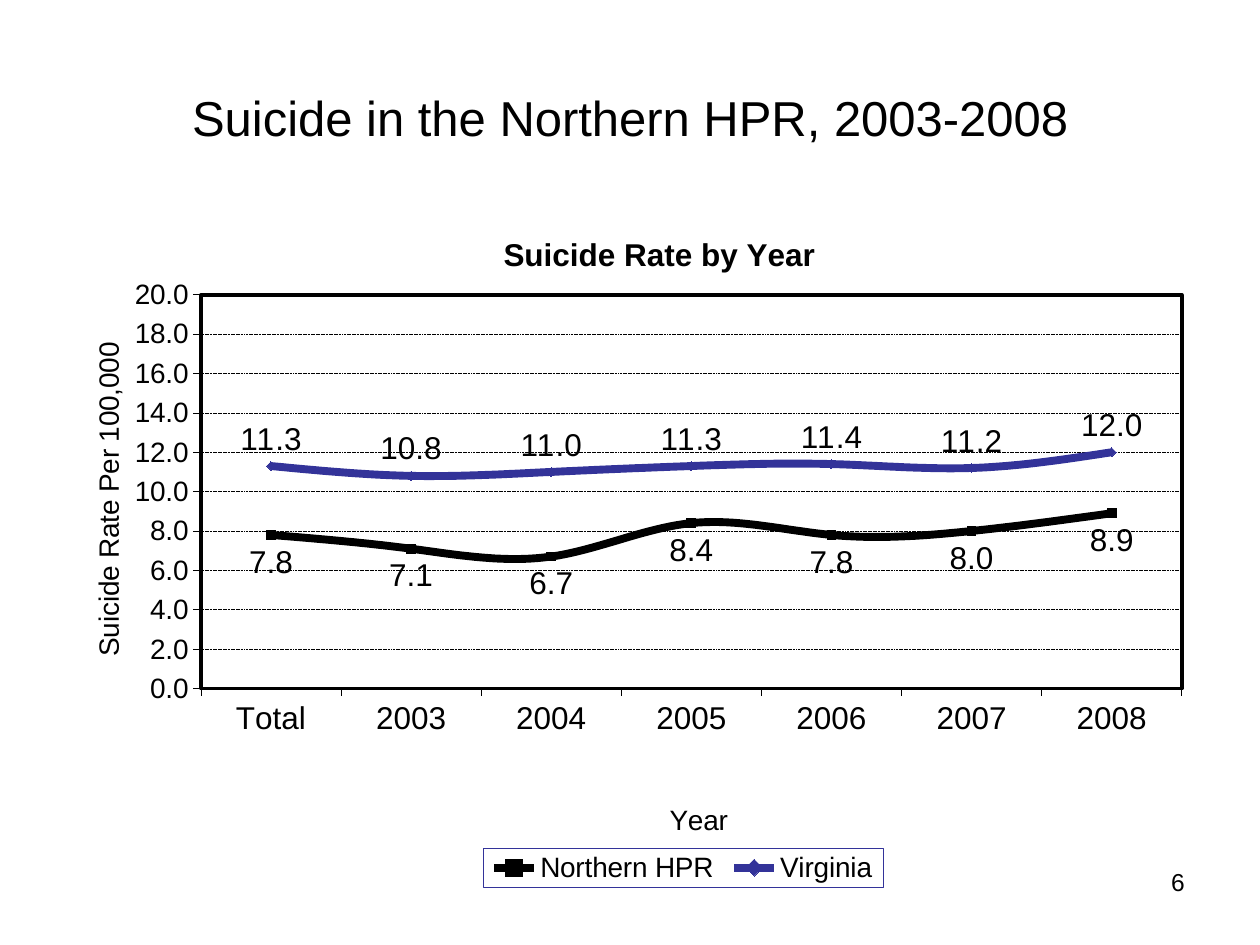
from lxml import etree
from pptx import Presentation, util as u
from pptx.chart.data import CategoryChartData
from pptx.dml.color import RGBColor
from pptx.enum import chart as ch, dml, text
from pptx.oxml import parse_xml
from pptx.oxml.ns import nsdecls, qn

PX = 914400 / 126
BLACK, INDIGO = "000000", "333399"


def style(font, size, bold=False):
    font.name, font.size, font.bold = "Arial", u.Pt(size), bold
    font.color.rgb = RGBColor.from_string(BLACK)


def set_layout(part, **settings):
    """Place a chart part by hand, in fractions of the chart's size."""
    for automatic in part.findall(qn("c:layout")):
        part.remove(automatic)
    layout = parse_xml(f'<c:layout {nsdecls("c")}><c:manualLayout/></c:layout>')
    for tag, value in settings.items():
        etree.SubElement(layout[0], qn(f"c:{tag}")).set("val", str(value))
    overlay = part.find(qn("c:overlay"))
    if overlay is None:
        part.insert(0, layout)
    else:
        overlay.addprevious(layout)


prs = Presentation()
prs.slide_width, prs.slide_height = round(1260 * PX), round(945 * PX)
slide = prs.slides.add_slide(prs.slide_layouts[5])

# Heading and page number
heading = slide.shapes.title
heading.left, heading.top, heading.width, heading.height = (
    round(n * PX) for n in (63, 38, 1134, 157))
heading.text_frame.text = "Suicide in the Northern HPR, 2003-2008"
heading.text_frame.vertical_anchor = text.MSO_ANCHOR.MIDDLE
heading.text_frame.paragraphs[0].alignment = text.PP_ALIGN.CENTER
style(heading.text_frame.paragraphs[0].font, 28)

page_number = slide.shapes.add_textbox(
    *(round(n * PX) for n in (903, 861, 294, 66))).text_frame
page_number.word_wrap = True
page_number.text = "6"
page_number.paragraphs[0].alignment = text.PP_ALIGN.RIGHT
style(page_number.paragraphs[0].font, 14)

# Suicide rates
rates = CategoryChartData(number_format="0.0")
rates.categories = ["Total", "2003", "2004", "2005", "2006", "2007", "2008"]
rates.add_series("Northern HPR", (7.8, 7.1, 6.7, 8.4, 7.8, 8.0, 8.9))
rates.add_series("Virginia", (11.3, 10.8, 11.0, 11.3, 11.4, 11.2, 12.0))
chart = slide.shapes.add_chart(
    ch.XL_CHART_TYPE.LINE_MARKERS,
    *(round(n * PX) for n in (57, 207, 1142, 697)), rates).chart
style(chart.font, 18)
chart.plots[0].vary_by_categories = False

series_looks = (
    (BLACK, ch.XL_MARKER_STYLE.SQUARE, ch.XL_LABEL_POSITION.BELOW),
    (INDIGO, ch.XL_MARKER_STYLE.DIAMOND, ch.XL_LABEL_POSITION.ABOVE),
)
for region, (color, marker, label_position) in zip(chart.plots[0].series, series_looks):
    rgb = RGBColor.from_string(color)
    region.smooth = True
    region.format.line.width = u.Pt(4.5)
    region.format.line.color.rgb = rgb
    region.marker.style, region.marker.size = marker, 5
    region.marker.format.fill.solid()
    region.marker.format.fill.fore_color.rgb = rgb
    region.marker.format.line.color.rgb = rgb
    labels = region.data_labels
    labels.show_value = True
    labels.position = label_position
    labels.number_format, labels.number_format_is_linked = "0.0", False
    style(labels.font, 18)

# Axes
years, rate_scale = chart.category_axis, chart.value_axis
rate_scale.minimum_scale, rate_scale.maximum_scale = 0, 20
rate_scale.major_unit = 2
rate_scale.tick_labels.number_format = "0.0"
rate_scale.tick_labels.number_format_is_linked = False
rate_scale.has_major_gridlines = True
gridlines = rate_scale.major_gridlines.format.line
gridlines.dash_style = dml.MSO_LINE.SQUARE_DOT
for line in (gridlines, years.format.line, rate_scale.format.line):
    line.width = u.Pt(0.38)
    line.color.rgb = RGBColor.from_string(BLACK)
for axis, size in ((years, 18), (rate_scale, 16)):
    axis.major_tick_mark = ch.XL_TICK_MARK.OUTSIDE
    style(axis.tick_labels.font, size)

# Titles
chart.has_title = True
titles = (
    (chart.chart_title, "Suicide Rate by Year", 18, True, 0.386, 0.03),
    (years.axis_title, "Year", 16, False, 0.532, 0.846),
    (rate_scale.axis_title, "Suicide Rate Per 100,000", 16, False, 0.025, 0.187),
)
for title, wording, size, bold, x, y in titles:
    title.text_frame.text = wording
    style(title.text_frame.paragraphs[0].font, size, bold)
    set_layout(title._element, xMode="edge", yMode="edge", x=x, y=y)

# Legend
chart.has_legend = True
legend = chart.legend
legend.position = ch.XL_LEGEND_POSITION.BOTTOM
legend.include_in_layout = False
style(legend.font, 16)
set_layout(legend._element, xMode="edge", yMode="edge",
           x=0.373, y=0.92, w=0.351, h=0.056)

# Plot area, with frames around it and the legend
plot_area = chart._chartSpace.chart.plotArea
set_layout(plot_area, layoutTarget="inner", xMode="edge", yMode="edge",
           x=0.126, y=0.126, w=0.859, h=0.565)


for part, color, width in ((plot_area, BLACK, 2), (legend._element, INDIGO, 0.38)):
    frame = parse_xml(
        f'<c:spPr {nsdecls("c", "a")}><a:noFill/><a:ln w="{u.Pt(width)}"><a:solidFill>'
        f'<a:srgbClr val="{color}"/></a:solidFill></a:ln></c:spPr>')
    following_text = part.find(qn("c:txPr"))
    if following_text is None:
        part.append(frame)
    else:
        following_text.addprevious(frame)

prs.save("out.pptx")
